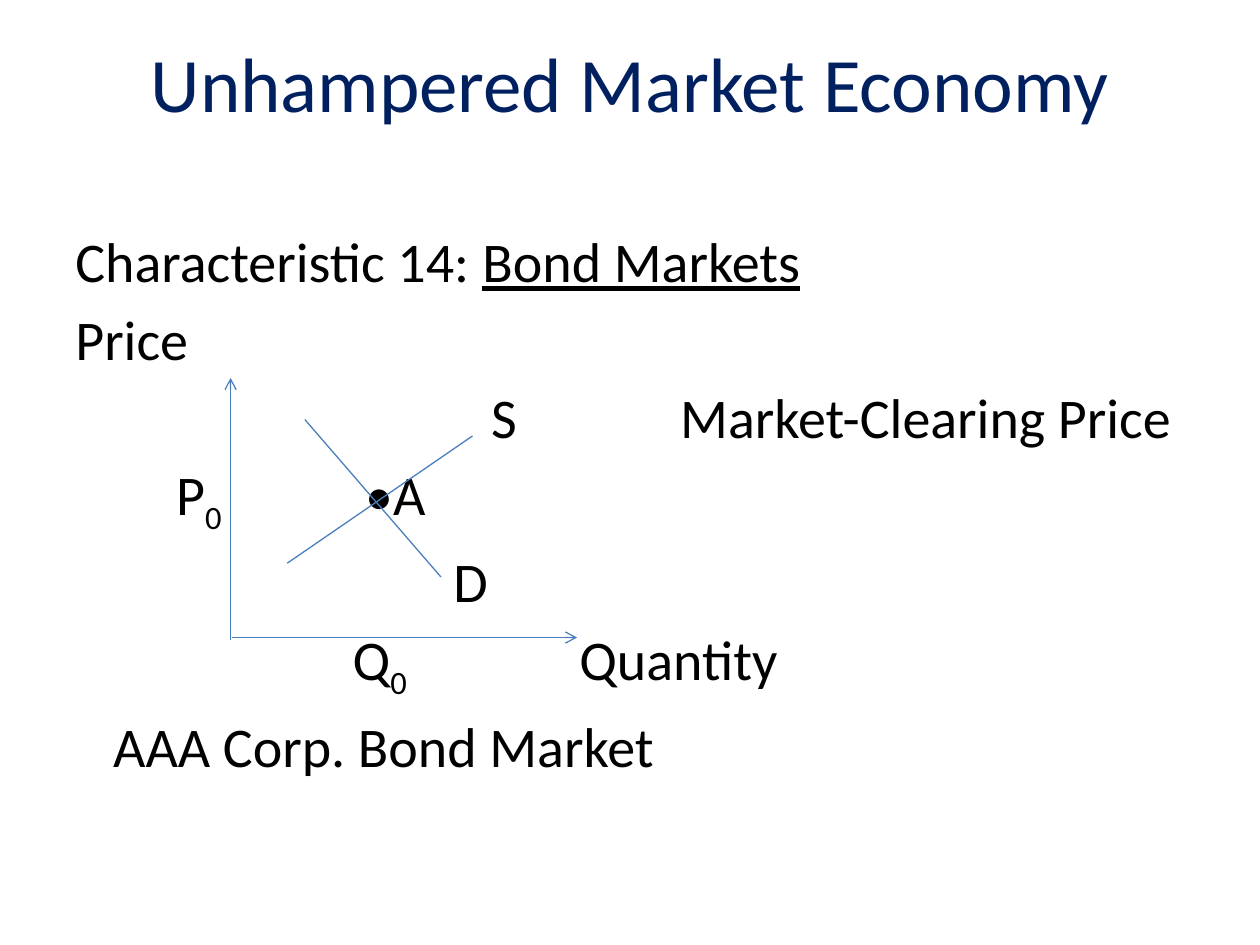
from lxml.etree import SubElement
from pptx import Presentation
from pptx.dml.color import RGBColor
from pptx.enum.shapes import MSO_CONNECTOR
from pptx.enum.text import MSO_ANCHOR, PP_ALIGN
from pptx.oxml.ns import qn
from pptx.util import Inches, Pt

NAVY = RGBColor(0x00, 0x20, 0x60)
BLACK = RGBColor(0x00, 0x00, 0x00)
BLUE = RGBColor(0x4B, 0x7E, 0xBC)

deck = Presentation()
deck.slide_width, deck.slide_height = Inches(10), Inches(7.5)
slide = deck.slides.add_slide(deck.slide_layouts[6])


def add_box(left, top, width, height, anchor):
    box = slide.shapes.add_textbox(*map(Inches, (left, top, width, height)))
    frame = box.text_frame
    frame.word_wrap = True
    frame.vertical_anchor = anchor
    return frame


def add_run(para, text, size, color):
    run = para.add_run()
    run.text = text
    for name, value in {"name": "Calibri", "size": Pt(size)}.items():
        setattr(run.font, name, value)
    run.font.color.rgb = color
    return run


# Title
title = add_box(0, 0.02, 10, 1.25, MSO_ANCHOR.MIDDLE).paragraphs[0]
title.alignment = PP_ALIGN.CENTER
add_run(title, "Unhampered Market Economy", 44, NAVY)

# Body rows: tab stops in inches, then runs of text and style
rows = [
    ([], [("Characteristic 14: ", ""), ("Bond Markets", "under")]),
    ([], [("Price", "")]),
    ([3.3, 4.8], [("\tS\tMarket-Clearing Price", "")]),
    ([0.8, 2.3], [("\tP", ""), ("0", "sub"), ("\t•A", "")]),
    ([3], [("\tD", "")]),
    ([2.2, 4], [("\tQ", ""), ("0", "sub"), ("\tQuantity", "")]),
    ([0.3], [("\tAAA Corp. Bond Market", "")]),
]
body = add_box(0.5, 1.75, 9, 5.75, MSO_ANCHOR.TOP)
for i, (stops, parts) in enumerate(rows):
    para = body.paragraphs[0] if i == 0 else body.add_paragraph()
    para.space_before = Pt(6)
    if stops:
        tabs = SubElement(para._p.get_or_add_pPr(), qn("a:tabLst"))
        for stop in stops:
            SubElement(tabs, qn("a:tab"), pos=str(Inches(stop)), algn="l")
    for text, style in parts:
        run = add_run(para, text, 32, BLACK)
        if style == "under":
            run.font.underline = True
        elif style == "sub":
            run.font._element.set("baseline", "-25000")

# Axes with arrowheads, then the demand and supply lines
lines = [
    (1.83, 5.08, 1.83, 3, True),
    (1.84, 5.06, 4.58, 5.06, True),
    (2.42, 3.33, 3.5, 4.58, False),
    (2.28, 4.47, 3.75, 3.46, False),
]
for *ends, arrow in lines:
    line = slide.shapes.add_connector(MSO_CONNECTOR.STRAIGHT, *map(Inches, ends))
    line.line.color.rgb = BLUE
    line.line.width = Pt(0.75)
    if arrow:
        SubElement(line.line._get_or_add_ln(), qn("a:tailEnd"), type="arrow")
    SubElement(line._element.spPr, qn("a:effectLst"))

deck.save("out.pptx")
